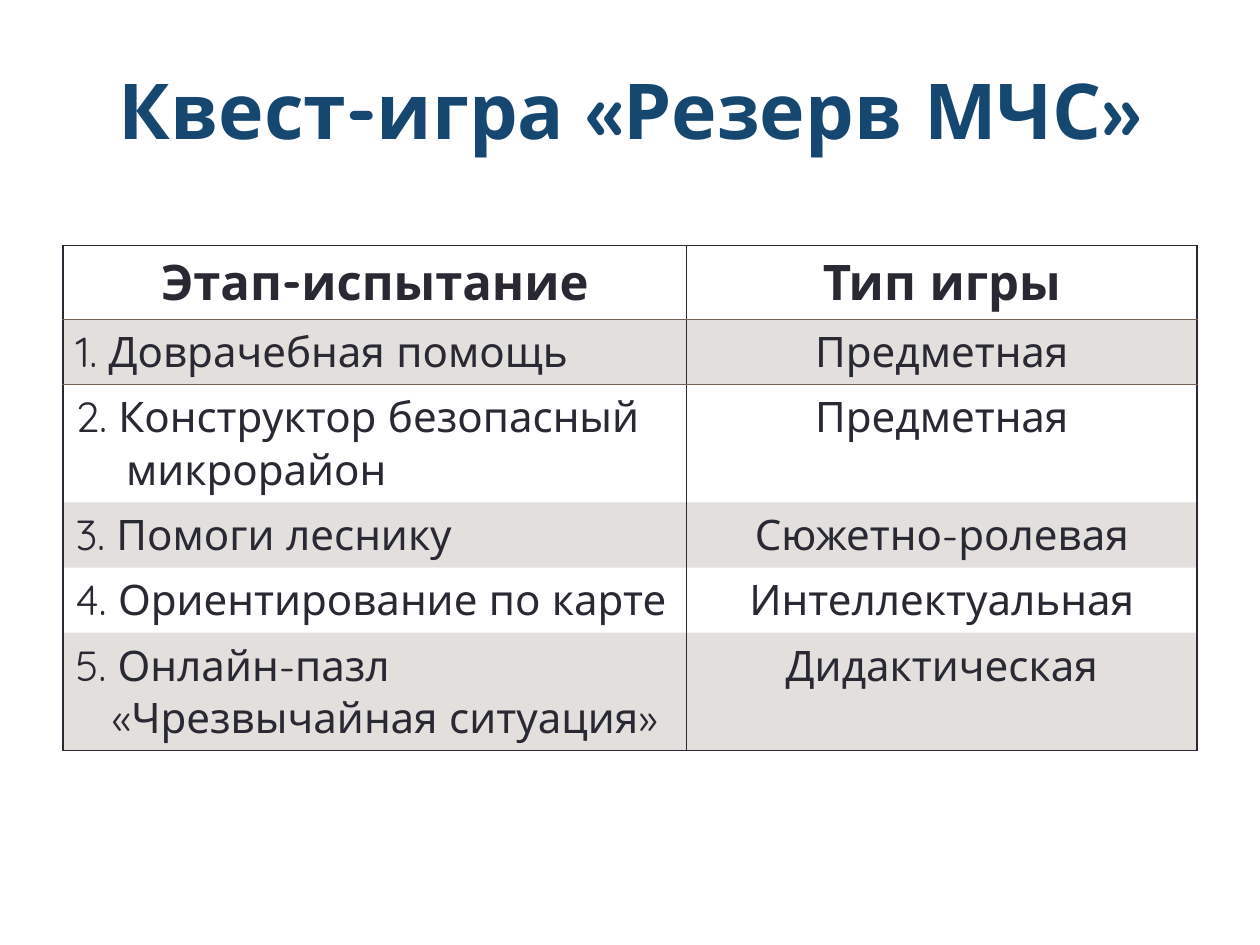
from dataclasses import dataclass

from lxml import etree
from pptx import Presentation
from pptx import util as u
from pptx.dml.color import RGBColor
from pptx.enum import text
from pptx.oxml import ns


@dataclass(frozen=True)
class Theme:
    font: str = "Quicksand"
    title: str = "164770"
    ink: str = "292934"
    accent: str = "726056"
    band_alpha: int = 20
    title_size: int = 44
    head_size: int = 28
    body_size: int = 24
    border: float = 1


THEME = Theme()
NO_STYLE = "{2D5ABB26-0587-4C30-8999-92F81FD0307C}"
HEADERS = ("Этап-испытание", "Тип игры")
# stage, type of game, hanging indent in inches
STAGES = [
    ("1. Доврачебная помощь", "Предметная", 0),
    ("2. Конструктор безопасный микрорайон", "Предметная", 0.4),
    ("3. Помоги леснику", "Сюжетно-ролевая", 0),
    ("4. Ориентирование по карте", "Интеллектуальная", 0.2),
    ("5. Онлайн-пазл «Чрезвычайная ситуация»", "Дидактическая", 0.29),
]


def write(tf, words, size, color=THEME.ink, bold=False, center=True, hang=0):
    p = tf.paragraphs[0]
    p.alignment = text.PP_ALIGN.CENTER if center else text.PP_ALIGN.LEFT
    if hang:
        pPr = p._p.get_or_add_pPr()
        pPr.set("marL", str(u.Inches(hang)))
        pPr.set("indent", str(-u.Inches(hang)))
    r = p.add_run()
    r.text = words
    r.font.name, r.font.size, r.font.bold = THEME.font, u.Pt(size), bold
    r.font.color.rgb = RGBColor.from_string(color)


def set_borders(cell, **sides):
    """Draw the given sides (L, R, T, B, in this order) in the given colours."""
    tcPr = cell._tc.get_or_add_tcPr()
    for side, color in sides.items():
        ln = etree.SubElement(tcPr, ns.qn(f"a:ln{side}"), w=str(u.Pt(THEME.border)))
        fill = etree.SubElement(ln, ns.qn("a:solidFill"))
        etree.SubElement(fill, ns.qn("a:srgbClr"), val=color)


def set_band(cell, banded):
    if not banded:
        cell.fill.background()
        return
    cell.fill.solid()
    cell.fill.fore_color.rgb = RGBColor.from_string(THEME.accent)
    clr = cell._tc.tcPr.find(f"{ns.qn('a:solidFill')}/{ns.qn('a:srgbClr')}")
    etree.SubElement(clr, ns.qn("a:alpha"), val=str(THEME.band_alpha * 1000))


def add_title(slide, box, words):
    sp = slide.shapes.title
    sp.left, sp.top, sp.width, sp.height = box
    tf = sp.text_frame
    tf.vertical_anchor = text.MSO_ANCHOR.MIDDLE
    write(tf, words, THEME.title_size, color=THEME.title, bold=True)


def add_stage_table(slide, box, first_share):
    rows = [(*HEADERS, 0), *STAGES]
    last = len(rows) - 1
    table = slide.shapes.add_table(len(rows), len(HEADERS), *box).table
    table._tbl.tblPr.find(ns.qn("a:tableStyleId")).text = NO_STYLE
    table.columns[0].width = int(box[2] * first_share)
    table.columns[1].width = box[2] - table.columns[0].width

    for i, (stage, kind, hang) in enumerate(rows):
        table.rows[i].height = u.Inches(0.41)  # grows with the text
        head = i == 0
        for j, words in enumerate((stage, kind)):
            cell = table.cell(i, j)
            sides = {"L": THEME.ink, "R": THEME.ink}
            if head:
                sides.update(T=THEME.ink, B=THEME.accent)
            elif i == 1:
                sides.update(T=THEME.accent)
            elif i == last:
                sides.update(B=THEME.ink)
            set_borders(cell, **sides)
            set_band(cell, i % 2 == 1)
            write(cell.text_frame, words,
                  THEME.head_size if head else THEME.body_size,
                  bold=head, center=head or j == 1, hang=0 if j else hang)


def main():
    prs = Presentation()
    prs.slide_width, prs.slide_height = u.Inches(10), u.Inches(7.5)
    slide = prs.slides.add_slide(prs.slide_layouts[5])

    def box(x, y, w, h):
        """Shares of the slide's size as a left, top, width, height box."""
        return (int(prs.slide_width * x), int(prs.slide_height * y),
                int(prs.slide_width * w), int(prs.slide_height * h))

    # Title
    add_title(slide, box(0.05, 0.03, 0.9, 0.17), "Квест-игра «Резерв МЧС»")
    # Table of stages
    add_stage_table(slide, box(0.05, 0.26, 0.9, 0.33), first_share=0.55)
    prs.save("out.pptx")


if __name__ == "__main__":
    main()
